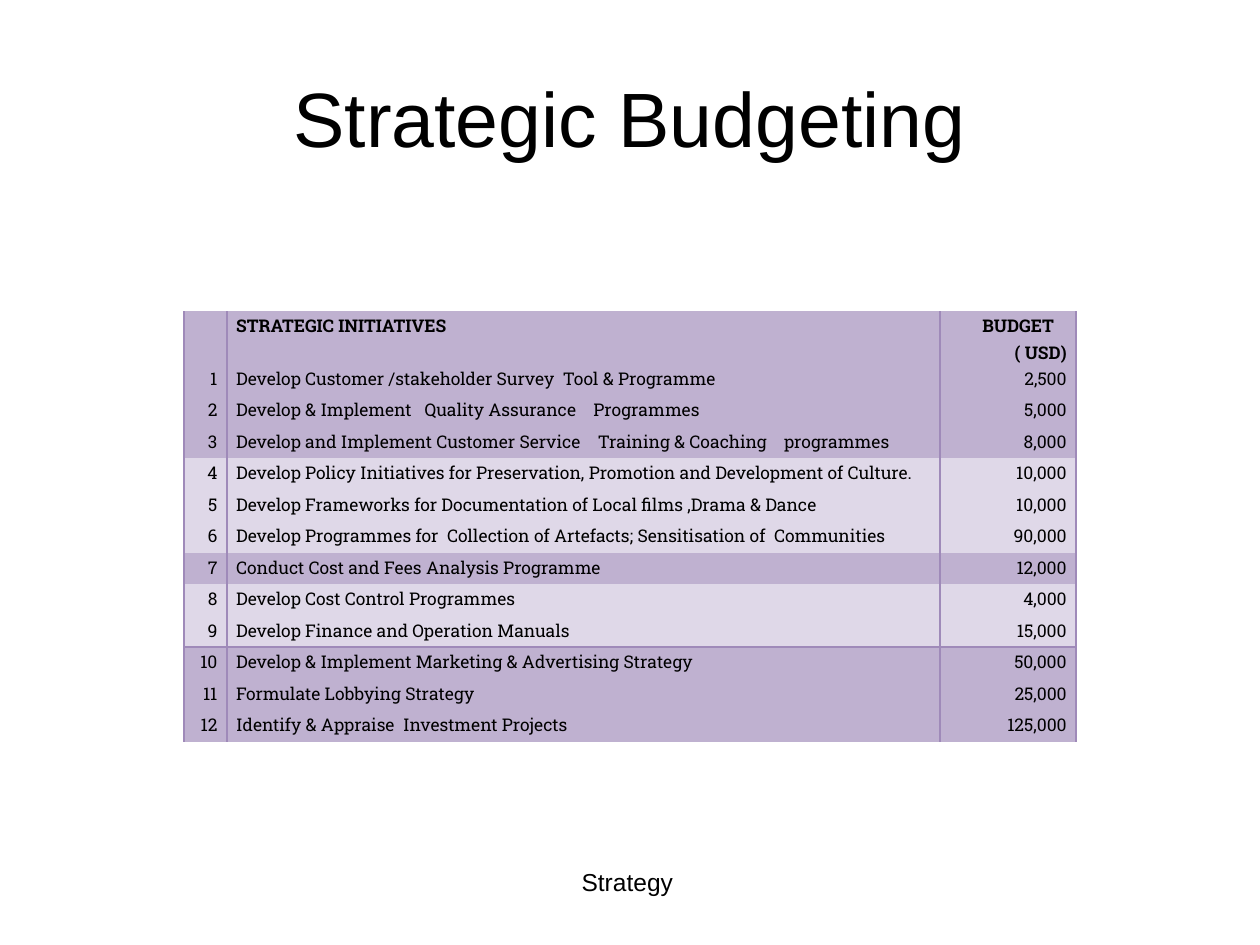
from dataclasses import dataclass

from lxml import etree
from pptx import Presentation
from pptx.dml.color import RGBColor
from pptx.enum.text import MSO_ANCHOR, PP_ALIGN
from pptx.oxml.ns import qn
from pptx.util import Pt

LEFT, MID, RIGHT = PP_ALIGN.LEFT, PP_ALIGN.CENTER, PP_ALIGN.RIGHT
TOP, CENTRE = MSO_ANCHOR.TOP, MSO_ANCHOR.MIDDLE

HUES = {"ink": "000000", "dark": "BFB1D0", "light": "DFD8E8", "rule": "9F8AB9"}
WIDTHS = (24.5, 407.5, 77.8)
ALIGNS = (RIGHT, LEFT, RIGHT)
ROW = 18
HEAD_ROW = 30  # room for two lines


@dataclass
class Label:
    text: str
    box: tuple[float, float, float, float]
    size: int
    anchor: MSO_ANCHOR


@dataclass
class Line:
    name: str
    cost: str
    hue: str


LABELS = [
    Label("Strategic Budgeting", (36, 21.6, 648, 90), 44, CENTRE),
    Label("Strategy", (244.5, 492, 228, 37.4), 14, TOP),
]
HEAD = Line("STRATEGIC INITIATIVES", "BUDGET    ( USD)", "dark")
ITEMS = [
    Line("Develop Customer /stakeholder Survey  Tool & Programme", "2,500", "dark"),
    Line("Develop & Implement   Quality Assurance    Programmes", "5,000", "dark"),
    Line("Develop and Implement Customer Service    Training & Coaching    programmes",
         "8,000", "dark"),
    Line("Develop Policy Initiatives for Preservation, Promotion and Development of Culture.",
         "10,000", "light"),
    Line("Develop Frameworks for Documentation of Local films ,Drama & Dance",
         "10,000", "light"),
    Line("Develop Programmes for  Collection of Artefacts; Sensitisation of  Communities",
         "90,000", "light"),
    Line("Conduct Cost and Fees Analysis Programme", "12,000", "dark"),
    Line("Develop Cost Control Programmes", "4,000", "light"),
    Line("Develop Finance and Operation Manuals", "15,000", "light"),
    Line("Develop & Implement Marketing & Advertising Strategy", "50,000", "dark"),
    Line("Formulate Lobbying Strategy", "25,000", "dark"),
    Line("Identify & Appraise  Investment Projects", "125,000", "dark"),
]
SPLIT = 9  # a rule runs below this row


def colour(name: str) -> RGBColor:
    return RGBColor.from_string(HUES[name])


def write(para, text: str, size: int, face: str, bold: bool = False) -> None:
    run = para.add_run()
    run.text = text
    font = run.font
    font.size, font.name, font.bold = Pt(size), face, bold
    font.color.rgb = colour("ink")


def add_label(slide, label: Label) -> None:
    frame = slide.shapes.add_textbox(*map(Pt, label.box)).text_frame
    frame.word_wrap = True
    frame.vertical_anchor = label.anchor
    para = frame.paragraphs[0]
    para.alignment = MID
    write(para, label.text, label.size, "Arial")


def add_edges(cell, ruled: str) -> None:
    """Rule the named sides (L, R, T, B) and clear the others."""
    props = cell._tc.get_or_add_tcPr()
    for spot, side in enumerate("LRTB"):
        edge = etree.Element(qn(f"a:ln{side}"), w=str(Pt(1)))
        if side in ruled:
            fill = etree.SubElement(edge, qn("a:solidFill"))
            etree.SubElement(fill, qn("a:srgbClr"), val=HUES["rule"])
        else:
            etree.SubElement(edge, qn("a:noFill"))
        props.insert(spot, edge)


def fill_cell(cell, text: str, align: PP_ALIGN, hue: str, bold: bool) -> None:
    cell.margin_left = cell.margin_right = Pt(5.4)
    cell.margin_top = cell.margin_bottom = Pt(0)
    cell.fill.solid()
    cell.fill.fore_color.rgb = colour(hue)
    para = cell.text_frame.paragraphs[0]
    para.alignment = align
    para.line_spacing = 1.15
    if text:
        write(para, text, 10, "Roboto Slab", bold)
    else:
        para.font.size = Pt(10)


def add_budget(slide) -> None:
    lines = [HEAD, *ITEMS]
    high = HEAD_ROW + ROW * len(ITEMS)
    frame = slide.shapes.add_table(len(lines), len(WIDTHS), Pt(105.1), Pt(177.8),
                                   Pt(sum(WIDTHS)), Pt(high))
    table = frame.table
    table.first_row = table.horz_banding = False
    for col, width in zip(table.columns, WIDTHS):
        col.width = Pt(width)
    for num, line in enumerate(lines):
        table.rows[num].height = Pt(ROW if num else HEAD_ROW)
        ruled = "LR" + {SPLIT: "B", SPLIT + 1: "T"}.get(num, "")
        texts = (str(num) if num else "", line.name, line.cost)
        for col, (text, align) in enumerate(zip(texts, ALIGNS)):
            cell = table.cell(num, col)
            fill_cell(cell, text, align, line.hue, num == 0)
            add_edges(cell, ruled)


def main() -> None:
    deck = Presentation()
    deck.slide_width, deck.slide_height = Pt(720), Pt(540)
    slide = deck.slides.add_slide(deck.slide_layouts[6])
    # Title and footer
    for label in LABELS:
        add_label(slide, label)
    # Budget table
    add_budget(slide)
    deck.save("out.pptx")


if __name__ == "__main__":
    main()
